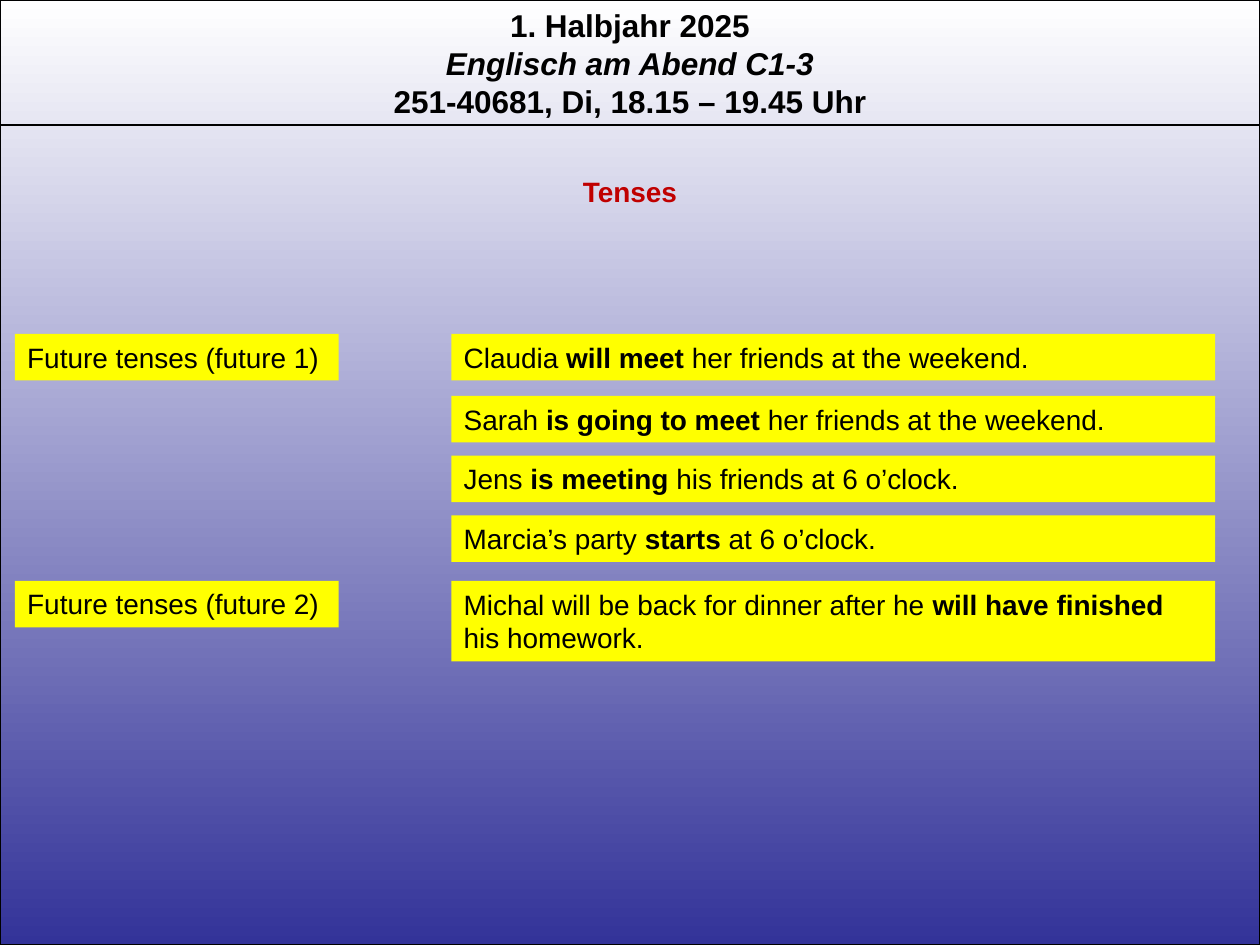
from pptx import Presentation
from pptx.dml.color import RGBColor
from pptx.enum.shapes import MSO_CONNECTOR, MSO_SHAPE
from pptx.enum.text import MSO_ANCHOR, MSO_AUTO_SIZE, PP_ALIGN
from pptx.util import Pt
from lxml.etree import SubElement
from pptx.oxml.ns import qn

WIDTH, HEIGHT = 720, 540
BLACK, RED, YELLOW = "000000", "C00000", "FFFF00"
LABELS = [
    (190.8, "Future tenses (future 1)"),
    (331.9, "Future tenses (future 2)"),
]
SAMPLES = [
    (190.8, 26.6, "Claudia ", "will meet ", "her friends at the weekend."),
    (226.3, 26.6, "Sarah ", "is going to meet ", "her friends at the weekend."),
    (260.4, 26.6, "Jens ", "is meeting ", "his friends at 6 o’clock."),
    (294.5, 26.6, "Marcia’s party ", "starts", " at 6 o’clock."),
    (331.9, 46, "Michal will be back for dinner after he ",
     "will have finished ", "his homework."),
]


def color(code):
    return RGBColor.from_string(code)


def add_run(para, text, size, tint=BLACK, bold=False, italic=False):
    run = para.add_run()
    run.text = text
    font = run.font
    font.name, font.size = "Arial", Pt(size)
    font.bold, font.italic = bold, italic
    font.color.rgb = color(tint)


def add_panel(slide):
    panel = slide.shapes.add_shape(MSO_SHAPE.RECTANGLE, 0, 0, Pt(WIDTH), Pt(HEIGHT))
    panel.shadow.inherit = False
    panel.fill.gradient()
    panel.fill.gradient_angle = 270
    for stop, (place, code) in zip(panel.fill.gradient_stops, [(0, "FFFFFF"), (1, "333399")]):
        stop.position = place
        stop.color.rgb = color(code)
    panel.line.color.rgb = color(BLACK)
    panel.line.width = Pt(0.75)


def add_rule(slide, top):
    rule = slide.shapes.add_connector(MSO_CONNECTOR.STRAIGHT, 0, Pt(top), Pt(WIDTH), Pt(top))
    rule.line.color.rgb = color(BLACK)
    rule.line.width = Pt(0.75)
    SubElement(rule._element.spPr, qn("a:effectLst"))


def add_title(slide, top, height, lines, size, tint):
    frame = slide.shapes.add_textbox(0, Pt(top), Pt(WIDTH), Pt(height)).text_frame
    frame.word_wrap = True
    frame.auto_size = MSO_AUTO_SIZE.SHAPE_TO_FIT_TEXT
    for index, (text, italic) in enumerate(lines):
        para = frame.add_paragraph() if index else frame.paragraphs[0]
        para.alignment = PP_ALIGN.CENTER
        add_run(para, text, size, tint, True, italic)


def add_card(slide, left, top, width, height, parts):
    card = slide.shapes.add_shape(MSO_SHAPE.RECTANGLE, Pt(left), Pt(top), Pt(width), Pt(height))
    card.shadow.inherit = False
    card.fill.solid()
    card.fill.fore_color.rgb = color(YELLOW)
    card.line.fill.background()
    frame = card.text_frame
    frame.word_wrap = True
    frame.auto_size = MSO_AUTO_SIZE.SHAPE_TO_FIT_TEXT
    frame.vertical_anchor = MSO_ANCHOR.TOP
    para = frame.paragraphs[0]
    para.alignment = PP_ALIGN.LEFT
    for index, text in enumerate(parts):
        add_run(para, text, 16, bold=index == 1)


def main():
    deck = Presentation()
    deck.slide_width, deck.slide_height = Pt(WIDTH), Pt(HEIGHT)
    slide = deck.slides.add_slide(deck.slide_layouts[6])
    add_panel(slide)
    header = [
        ("1. Halbjahr 2025", False),
        ("Englisch am Abend C1-3", True),
        ("251-40681, Di, 18.15 – 19.45 Uhr", False),
    ]
    add_title(slide, 0, 72.7, header, 18, BLACK)
    add_rule(slide, 71.4)
    add_title(slide, 96, 26.6, [("Tenses", False)], 16, RED)
    for top, text in LABELS:
        add_card(slide, 8.5, top, 185, 26.6, [text])
    for top, height, *parts in SAMPLES:
        add_card(slide, 257.9, top, 436.5, height, parts)
    deck.save("out.pptx")


if __name__ == "__main__":
    main()
